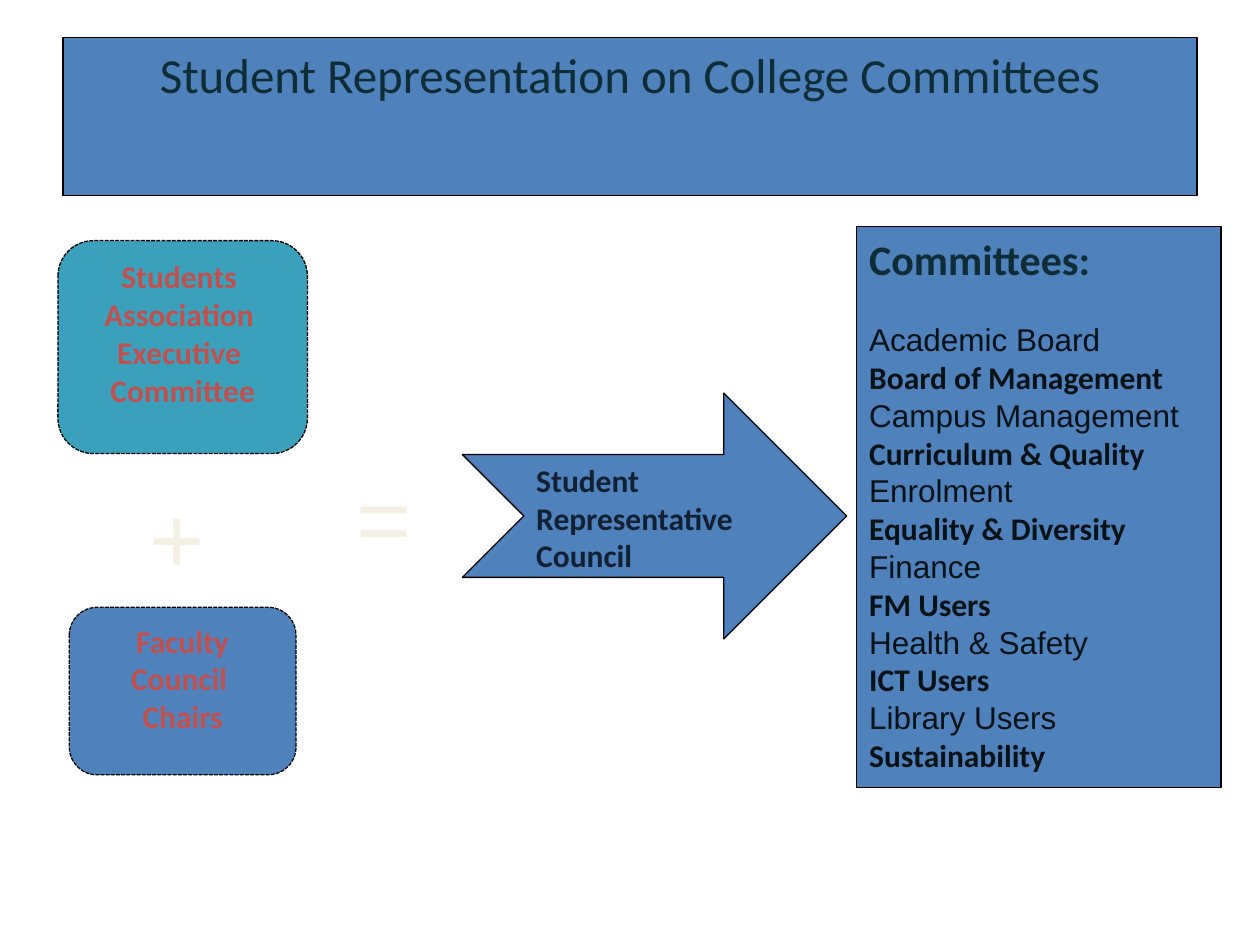
from dataclasses import dataclass

import pptx
import pptx.dml.color
import pptx.enum.dml
import pptx.enum.shapes
import pptx.enum.text
import pptx.util
from pptx.util import Inches

SHAPE = pptx.enum.shapes.MSO_SHAPE
ALIGN = pptx.enum.text.PP_ALIGN
BLUE, TEAL, RED, DARK = "4F81BD", "3BA0BB", "C0504D", "102C34"


@dataclass
class Panel:
    kind: int
    box: tuple[float, float, float, float]
    lines: list[str]
    color: str
    fill: str = BLUE
    size: int = 18
    bold: bool = True
    align: int = ALIGN.LEFT
    dashed: bool = False


@dataclass
class Sign:
    box: tuple[float, float, float, float]
    text: str


def rgb(value: str) -> pptx.dml.color.RGBColor:
    return pptx.dml.color.RGBColor.from_string(value)


def style(p, size: int, color: str, font: str = "Calibri", bold: bool = False) -> None:
    for r in p.runs:
        r.font.size = pptx.util.Pt(size)
        r.font.name = font
        r.font.bold = bold
        r.font.color.rgb = rgb(color)


def add_panel(s, panel: Panel):
    sp = s.shapes.add_shape(panel.kind, *map(Inches, panel.box))
    sp.shadow.inherit = False
    sp.fill.solid()
    sp.fill.fore_color.rgb = rgb(panel.fill)
    sp.line.color.rgb = rgb("000000")
    sp.line.width = pptx.util.Pt(0.75)
    if panel.dashed:
        sp.line.dash_style = pptx.enum.dml.MSO_LINE.SQUARE_DOT
    tf = sp.text_frame
    tf.word_wrap = True
    tf.vertical_anchor = pptx.enum.text.MSO_ANCHOR.TOP
    tf.text = "\n".join(panel.lines)
    for p in tf.paragraphs:
        p.alignment = panel.align
        style(p, panel.size, panel.color, bold=panel.bold)
    return sp


def add_sign(s, sign: Sign) -> None:
    tf = s.shapes.add_textbox(*map(Inches, sign.box)).text_frame
    tf.word_wrap = True
    tf.text = sign.text
    style(tf.paragraphs[0], 54, "F4F1E3", "Arial")


COMMITTEES = [
    "Academic Board", "Board of Management", "Campus Management",
    "Curriculum & Quality", "Enrolment", "Equality & Diversity", "Finance",
    "FM Users", "Health & Safety", "ICT Users", "Library Users", "Sustainability",
]

PANELS = [
    Panel(SHAPE.RECTANGLE, (0.5, 0.3, 9, 1.25),
          ["Student Representation on College Committees"], DARK,
          size=28, bold=False, align=ALIGN.CENTER),
    Panel(SHAPE.ROUNDED_RECTANGLE, (0.46, 1.91, 1.98, 1.69),
          ["Students ", "Association ", "Executive ", "Committee"], RED,
          fill=TEAL, align=ALIGN.CENTER, dashed=True),
    Panel(SHAPE.ROUNDED_RECTANGLE, (0.55, 4.82, 1.8, 1.33),
          [" Faculty ", "Council ", "Chairs"], RED,
          align=ALIGN.CENTER, dashed=True),
    Panel(SHAPE.NOTCHED_RIGHT_ARROW, (3.67, 3.12, 3.05, 1.95),
          ["Student Representative Council"], "122031"),
]
SIGNS = [Sign((1.09, 3.75, 0.7, 1.01), "+"), Sign((2.73, 3.59, 0.55, 1.01), "=")]


def add_committees(s) -> None:
    """Draw the list, alternating plain Arial and bold Calibri entries."""
    sp = add_panel(s, Panel(SHAPE.RECTANGLE, (6.8, 1.8, 2.89, 4.45),
                            ["Committees:", *COMMITTEES], DARK, size=24))
    heading, *entries = sp.text_frame.paragraphs
    heading.space_after = pptx.util.Pt(21)
    for i, p in enumerate(entries):
        bold = i % 2 == 1
        style(p, 18, "071215", "Calibri" if bold else "Arial", bold)


def main() -> None:
    prs = pptx.Presentation()
    prs.slide_width, prs.slide_height = Inches(10), Inches(7.5)
    s = prs.slides.add_slide(prs.slide_layouts[6])
    for panel in PANELS:
        add_panel(s, panel)
    for sign in SIGNS:
        add_sign(s, sign)
    add_committees(s)
    prs.save("out.pptx")


if __name__ == "__main__":
    main()
